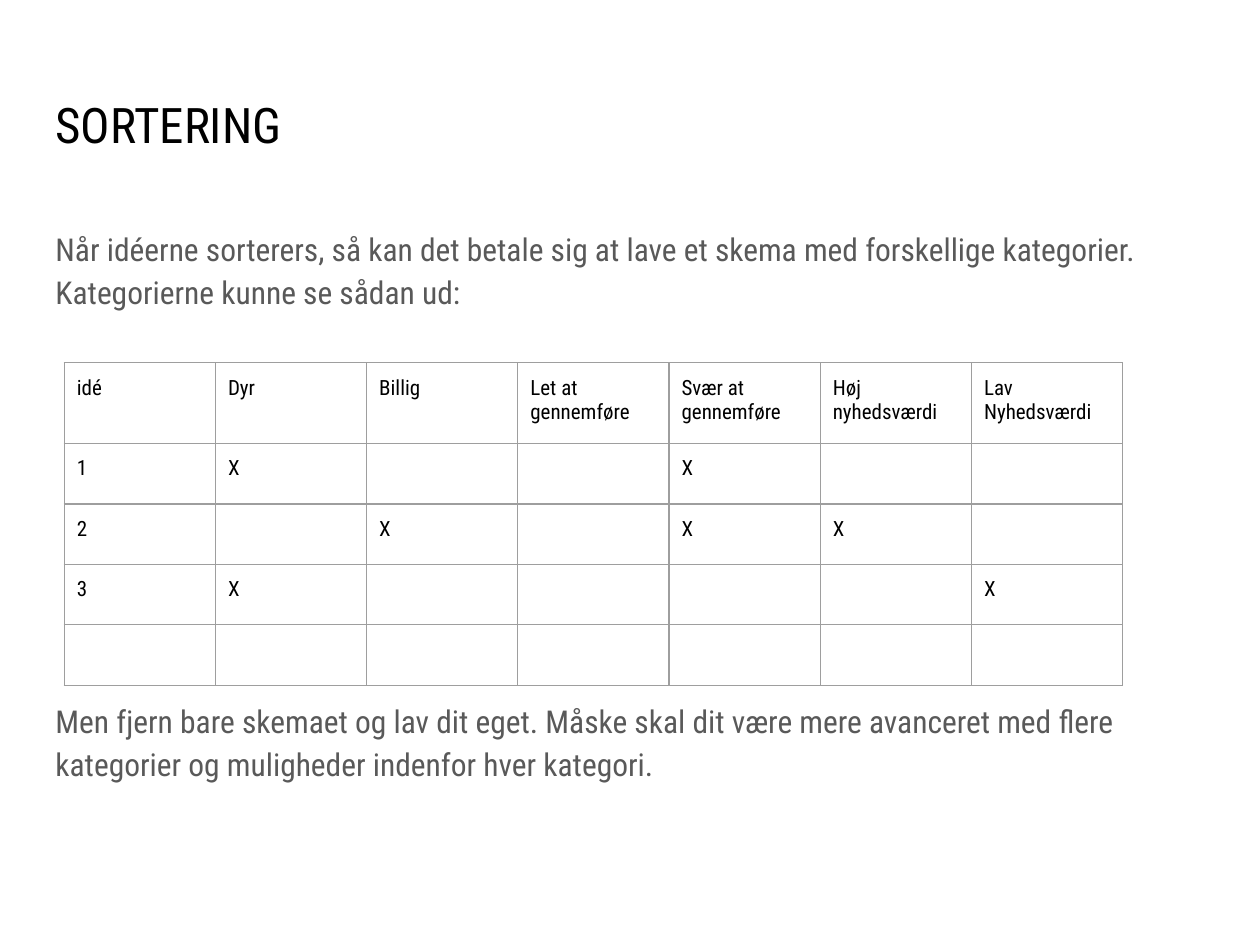
from lxml.etree import SubElement
from pptx import Presentation
from pptx.dml.color import RGBColor
from pptx.enum.text import MSO_ANCHOR as Anchor, MSO_AUTO_SIZE as AutoSize, PP_ALIGN as Align
from pptx.oxml.ns import qn
from pptx.util import Inches, Pt

CATEGORIES = ["idé", "Dyr", "Billig", "Let at gennemføre", "Svær at gennemføre",
              "Høj nyhedsværdi", "Lav Nyhedsværdi"]
MARKS = {"1": ["Dyr", "Svær at gennemføre"],
         "2": ["Billig", "Svær at gennemføre", "Høj nyhedsværdi"],
         "3": ["Dyr", "Lav Nyhedsværdi"],
         "": []}
INTRO = ("Når idéerne sorterers, så kan det betale sig at lave et skema med "
         "forskellige kategorier. Kategorierne kunne se sådan ud:")
ADVICE = ("Men fjern bare skemaet og lav dit eget. Måske skal dit være mere avanceret "
          "med flere kategorier og muligheder indenfor hver kategori.")


def colour(value):
    return RGBColor.from_string(value)


class SlideBuilder:
    font = "Roboto Condensed"
    ink, muted, rule = "000000", "595959", "9E9E9E"
    inset = Inches(0.1)

    def __init__(self, deck):
        self.width, self.height = deck.slide_width, deck.slide_height
        self.slide = deck.slides.add_slide(deck.slide_layouts[1])

    def area(self, left, top, width, height):
        return (round(left * self.width), round(top * self.height),
                round(width * self.width), round(height * self.height))

    def style(self, paragraph, size, hue):
        paragraph.alignment = Align.LEFT
        for font in [paragraph.font, *(run.font for run in paragraph.runs)]:
            font.name, font.size = self.font, Pt(size)
            font.color.rgb = colour(hue)

    def fit(self, holder, share):
        holder.left, holder.top, holder.width, holder.height = self.area(*share)
        frame = holder.text_frame
        frame.margin_left = frame.margin_right = self.inset
        frame.margin_top = frame.margin_bottom = self.inset
        frame.vertical_anchor = Anchor.TOP
        frame.word_wrap, frame.auto_size = True, AutoSize.NONE
        return frame

    def title(self, words, share):
        frame = self.fit(self.slide.shapes.title, share)
        frame.text = words
        self.style(frame.paragraphs[0], 28, self.ink)

    def body(self, passages, share, gap):
        frame = self.fit(self.slide.placeholders[1], share)
        frame.text = "\n".join(passages)
        for index, paragraph in enumerate(frame.paragraphs):
            self.style(paragraph, 18, self.muted)
            paragraph.line_spacing = 1.15
            paragraph.space_before = Pt(gap if index else 0)
            properties = paragraph._p.get_or_add_pPr()
            properties.set("marL", "0")
            properties.set("indent", "0")
            properties.insert_element_before(
                properties.makeelement(qn("a:buNone")), "a:tabLst", "a:defRPr", "a:extLst")

    def borders(self, cell):
        properties = cell._tc.get_or_add_tcPr()
        for index, side in enumerate(("lnL", "lnR", "lnT", "lnB")):
            line = properties.makeelement(qn(f"a:{side}"), {"w": str(Pt(0.75))})
            properties.insert(index, line)
            fill = SubElement(line, qn("a:solidFill"))
            SubElement(fill, qn("a:srgbClr"), {"val": self.rule})

    def table(self, rows, share, header_share):
        grid = self.slide.shapes.add_table(len(rows), len(rows[0]), *self.area(*share)).table
        grid.first_row = grid.horz_banding = False
        total = round(share[3] * self.height)
        header = round(header_share * total)
        for index, row in enumerate(grid.rows):
            row.height = (total - header) // (len(rows) - 1) if index else header
        for row, texts in zip(grid.rows, rows):
            for cell, words in zip(row.cells, texts):
                cell.text = words
                cell.margin_left = cell.margin_right = self.inset
                cell.margin_top = cell.margin_bottom = self.inset
                cell.fill.background()
                self.style(cell.text_frame.paragraphs[0], 12, self.ink)
                self.borders(cell)


def main():
    deck = Presentation()
    deck.slide_width, deck.slide_height = Inches(10), Inches(7.5)
    page = SlideBuilder(deck)
    page.title("SORTERING", (0.034, 0.65 / 7.5, 0.932, 0.83 / 7.5))
    page.body([INTRO, ADVICE], (0.034, 1.68 / 7.5, 0.932, 4.98 / 7.5), gap=220)
    ideas = [[idea] + ["X" if category in marked else "" for category in CATEGORIES[1:]]
             for idea, marked in MARKS.items()]
    page.table([CATEGORIES, *ideas], (0.051, 2.88 / 7.5, 0.84, 2.56 / 7.5), header_share=0.25)
    deck.save("out.pptx")


if __name__ == "__main__":
    main()
